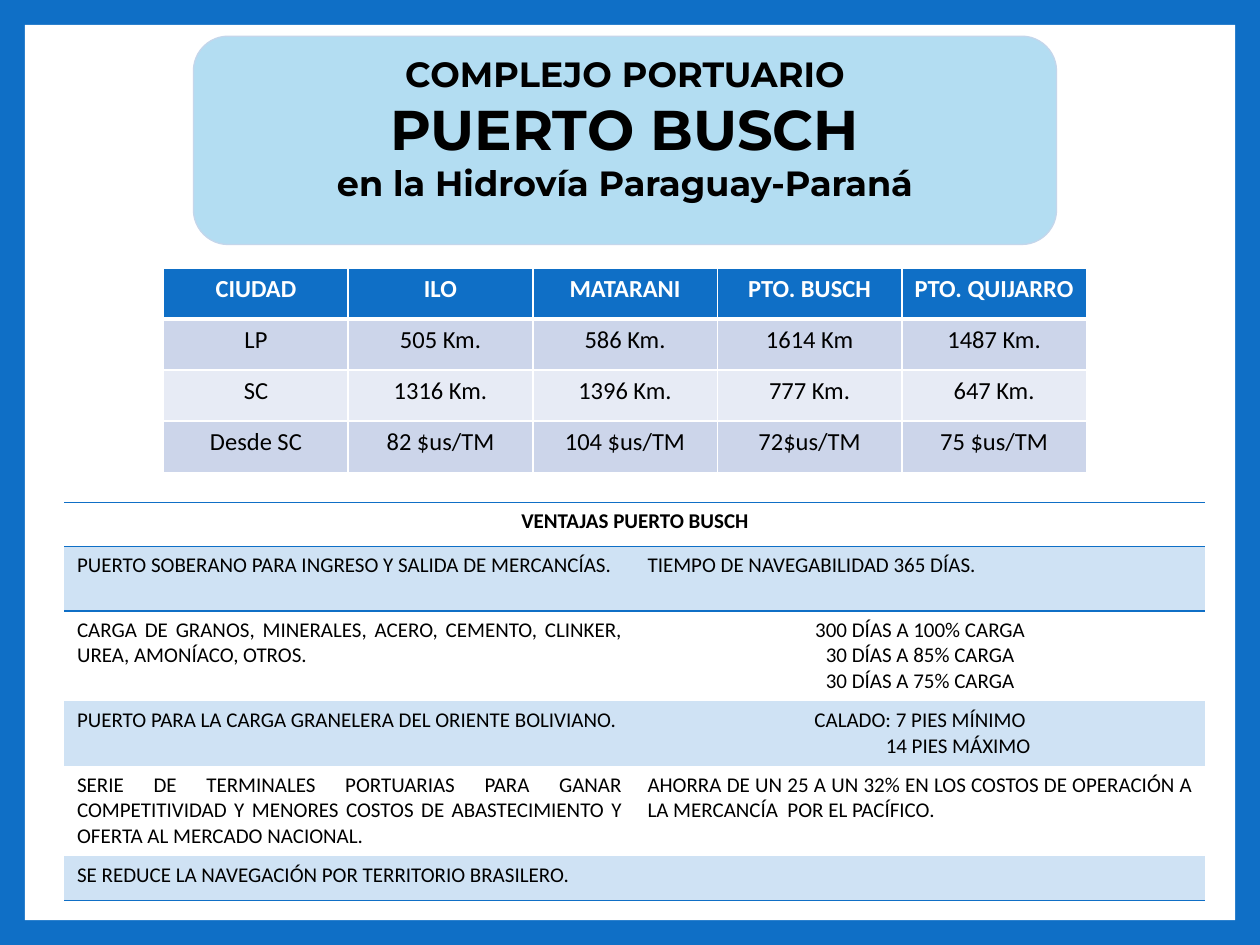
from pptx import Presentation
from pptx.dml.color import RGBColor
from pptx.enum.shapes import MSO_SHAPE as SHAPE
from pptx.enum.text import PP_ALIGN as ALIGN
from pptx.oxml.ns import qn
from pptx.util import Cm, Pt
from lxml.etree import SubElement

BLUE, WHITE, BLACK = "0F6FC6", "FFFFFF", "000000"
PALE_BLUE = "CFE2F4"
NO_STYLE = "{2D5ABB26-0587-4C30-8999-92F81FD0307C}"
DISTANCES = [
    ["CIUDAD", "ILO", "MATARANI", "PTO. BUSCH", "PTO. QUIJARRO"],
    ["LP", "505 Km.", "586 Km.", "1614 Km", "1487 Km."],
    ["SC", "1316 Km.", "1396 Km.", "777 Km.", "647 Km."],
    ["Desde SC", "82 $us/TM", "104 $us/TM", "72$us/TM", "75 $us/TM"],
]
ADVANTAGES = [
    ["VENTAJAS PUERTO BUSCH", ""],
    ["PUERTO SOBERANO PARA INGRESO Y SALIDA DE MERCANCÍAS.",
     "TIEMPO DE NAVEGABILIDAD 365 DÍAS."],
    ["CARGA DE GRANOS, MINERALES, ACERO, CEMENTO, CLINKER, UREA, AMONÍACO, OTROS.",
     "300 DÍAS A 100% CARGA\n30 DÍAS A 85% CARGA\n30 DÍAS A 75% CARGA"],
    ["PUERTO PARA LA CARGA GRANELERA DEL ORIENTE BOLIVIANO.",
     "CALADO: 7 PIES MÍNIMO\n14 PIES MÁXIMO"],
    ["SERIE DE TERMINALES PORTUARIAS PARA GANAR COMPETITIVIDAD Y MENORES COSTOS "
     "DE ABASTECIMIENTO Y OFERTA AL MERCADO NACIONAL.",
     "AHORRA DE UN 25 A UN 32% EN LOS COSTOS DE OPERACIÓN A LA MERCANCÍA  POR EL PACÍFICO."],
    ["SE REDUCE LA NAVEGACIÓN POR TERRITORIO BRASILERO.", ""],
]


def rgb(value):
    """Turn a hex string into a colour."""
    return RGBColor.from_string(value)


def write(tf, text, sizes, font="Calibri", color=BLACK, bold=False, align=ALIGN.CENTER):
    """Write one paragraph per line, with one size for each line."""
    for i, (line, size) in enumerate(zip(text.split("\n"), sizes)):
        p = tf.paragraphs[0] if i == 0 else tf.add_paragraph()
        p.alignment = align
        if not line:
            SubElement(p._p, qn("a:endParaRPr"), sz=str(size * 100))
            continue
        r = p.add_run()
        r.text = line
        r.font.size, r.font.name, r.font.bold = Pt(size), font, bold
        r.font.color.rgb = rgb(color)


def add_box(slide, kind, left, top, width, height, fill, line=None):
    """Add a filled preset shape, with an outline if one is given."""
    sp = slide.shapes.add_shape(kind, Cm(left), Cm(top), Cm(width), Cm(height))
    sp.shadow.inherit = False
    sp.fill.solid()
    sp.fill.fore_color.rgb = rgb(fill)
    if line:
        sp.line.color.rgb = rgb(line)
        sp.line.width = Pt(0.75)
    else:
        sp.line.fill.background()
    return sp


def format_cell(cell, fill, color, **widths):
    """Draw the given sides (L, R, T, B) of a cell and then fill it."""
    tcPr = cell._tc.get_or_add_tcPr()
    for side in "LRTB":
        if side in widths:
            ln = SubElement(tcPr, qn(f"a:ln{side}"), w=str(Pt(widths[side])))
            SubElement(SubElement(ln, qn("a:solidFill")), qn("a:srgbClr"), val=color)
    if fill:
        cell.fill.solid()
        cell.fill.fore_color.rgb = rgb(fill)
    else:
        cell.fill.background()


def add_grid(slide, left, top, col_width, heights, cols):
    """Add an unstyled table with equal columns."""
    frame = slide.shapes.add_table(len(heights), cols, Cm(left), Cm(top),
                                   Cm(col_width * cols), Cm(sum(heights)))
    table = frame.table
    table._tbl.tblPr.find(qn("a:tableStyleId")).text = NO_STYLE
    for col in table.columns:
        col.width = Cm(col_width)
    for row, height in zip(table.rows, heights):
        row.height = Cm(height)
    return table


def add_distances(slide):
    """Add the table of distances and freight costs."""
    table = add_grid(slide, 3.3, 5.4, 3.72, [1.03] * 4, 5)
    fills = [BLUE, "CCD5EA", "E7EBF5", "CCD5EA"]
    for i, row in enumerate(DISTANCES):
        head = i == 0
        for j, text in enumerate(row):
            cell = table.cell(i, j)
            write(cell.text_frame, text, [14], color=WHITE if head else BLACK, bold=head)
            format_cell(cell, fills[i], WHITE, L=1, R=1, T=3 if i == 1 else 1, B=3 if head else 1)


def add_advantages(slide):
    """Add the table of advantages."""
    heights = [0.89, 1.3, 1.82, 1.3, 1.82, 0.89]
    table = add_grid(slide, 1.3, 10.13, 11.5, heights, 2)
    table.cell(0, 0).merge(table.cell(0, 1))
    rules = {0: {"T": 1, "B": 1}, 1: {"T": 1}, 5: {"B": 1}}
    for i, row in enumerate(ADVANTAGES):
        for j, text in enumerate(row):
            cell = table.cell(i, j)
            centred = i == 0 or "\n" in text
            write(cell.text_frame, text, [12] * 3, bold=i == 0,
                  align=ALIGN.CENTER if centred else ALIGN.JUSTIFY)
            format_cell(cell, PALE_BLUE if i % 2 else None, BLUE, **rules.get(i, {}))
    maximum = table.cell(3, 1).text_frame.paragraphs[1]
    maximum._p.get_or_add_pPr().set("marL", str(Cm(1.53)))


def main():
    """Build the slide and save it."""
    prs = Presentation()
    prs.slide_width, prs.slide_height = Cm(25.4), Cm(19.05)
    slide = prs.slides.add_slide(prs.slide_layouts[6])
    slide.background.fill.solid()
    slide.background.fill.fore_color.rgb = rgb(BLUE)
    add_box(slide, SHAPE.RECTANGLE, 0.5, 0.5, 24.4, 18.05, WHITE)
    add_distances(slide)
    add_advantages(slide)
    title = add_box(slide, SHAPE.ROUNDED_RECTANGLE, 3.9, 0.73, 17.4, 4.2, "B3DDF2", "C4D6EB")
    tf = title.text_frame
    tf.word_wrap = True
    tf.vertical_anchor = ANCHOR.TOP
    write(tf, "COMPLEJO PORTUARIO\nPUERTO BUSCH\nen la Hidrovía Paraguay-Paraná",
          [20, 32, 20], font="Montserrat", bold=True)


    prs.save("out.pptx")


from pptx.enum.text import MSO_ANCHOR as ANCHOR

if __name__ == "__main__":
    main()
